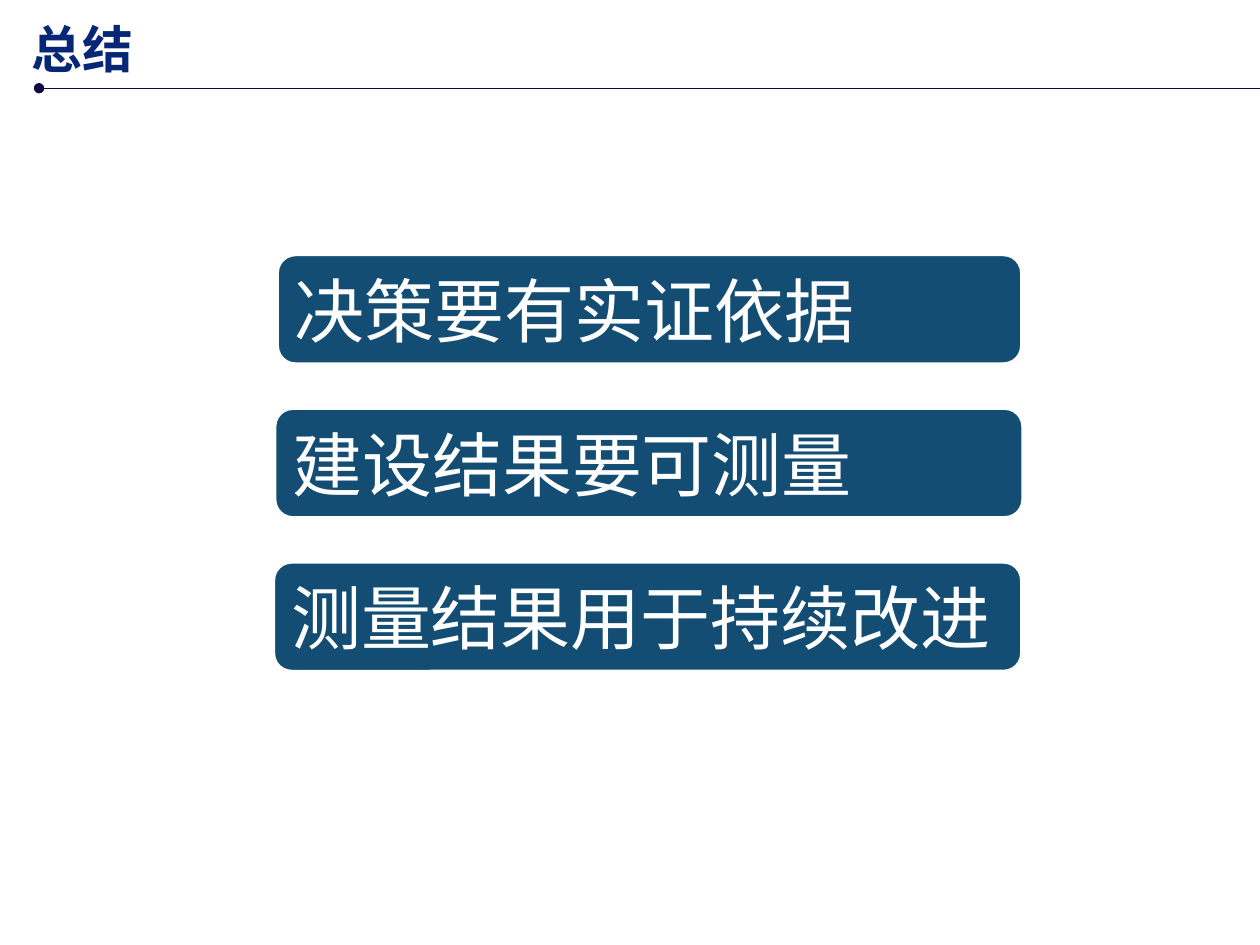
"""Build the summary slide with three key conclusions."""
import lxml.etree
import pptx
import pptx.dml.color
import pptx.enum.shapes
import pptx.enum.text
import pptx.oxml.ns
import pptx.util

Inches = pptx.util.Inches
COLORS = {"title": "072676", "rule": "100A46", "box": "144D73", "white": "FFFFFF"}
CJK_FONT = "Noto Sans CJK SC"
TITLE = "总结"
CONCLUSIONS = [
    ("决策要有实证依据", 2.2, 5.91),
    ("建设结果要可测量", 2.18, 5.94),
    ("测量结果用于持续改进", 2.17, 5.94),
]
BOX_TOP, BOX_HEIGHT, BOX_STEP = 2.02, 0.87, 1.22


def color(name):
    return pptx.dml.color.RGBColor.from_string(COLORS[name])


def add_element(parent, tag, **attributes):
    return lxml.etree.SubElement(parent, pptx.oxml.ns.qn(tag), attributes)


def write(shape, text, size, font_name, color_name, bold=False):
    frame = shape.text_frame
    frame.text = text
    frame.vertical_anchor = pptx.enum.text.MSO_ANCHOR.MIDDLE
    paragraph = frame.paragraphs[0]
    paragraph.alignment = pptx.enum.text.PP_ALIGN.LEFT
    font = paragraph.font
    font.size = pptx.util.Pt(size)
    font.bold = bold
    font.name = font_name
    font.color.rgb = color(color_name)
    properties = paragraph._p.find(".//" + pptx.oxml.ns.qn("a:defRPr"))
    add_element(properties, "a:ea", typeface=CJK_FONT)


def add_title(slide):
    title = slide.shapes.title
    title.left, title.top = Inches(0.25), Inches(0.14)
    title.width, title.height = Inches(6.72), Inches(0.49)
    frame = title.text_frame
    frame.margin_left = frame.margin_right = frame.margin_top = frame.margin_bottom = 0
    frame.word_wrap = True
    frame.auto_size = pptx.enum.text.MSO_AUTO_SIZE.NONE
    write(title, TITLE, 29, CJK_FONT, "title", bold=True)


def add_rule(slide):
    rule = slide.shapes.add_connector(
        pptx.enum.shapes.MSO_CONNECTOR.STRAIGHT,
        Inches(0.31), Inches(0.7), Inches(10.09), Inches(0.7),
    )
    rule.line.color.rgb = color("rule")
    rule.line.width = pptx.util.Pt(0.5)
    add_element(rule.line._get_or_add_ln(), "a:headEnd", type="oval")
    add_element(rule._element.spPr, "a:effectLst")


def add_conclusion(slide, text, left, top, width):
    box = slide.shapes.add_shape(
        pptx.enum.shapes.MSO_SHAPE.ROUNDED_RECTANGLE,
        Inches(left), Inches(top), Inches(width), Inches(BOX_HEIGHT),
    )
    box.shadow.inherit = False
    box.fill.solid()
    box.fill.fore_color.rgb = color("box")
    box.line.color.rgb = color("white")
    box.line.width = pptx.util.Pt(2)
    write(box, text, 40, "DejaVu Sans", "white")


def main():
    presentation = pptx.Presentation()
    presentation.slide_width, presentation.slide_height = Inches(10), Inches(7.5)
    slide = presentation.slides.add_slide(presentation.slide_layouts[5])
    for index, (text, left, width) in enumerate(CONCLUSIONS):
        add_conclusion(slide, text, left, BOX_TOP + index * BOX_STEP, width)
    add_title(slide)
    add_rule(slide)
    presentation.save("out.pptx")


if __name__ == "__main__":
    main()
